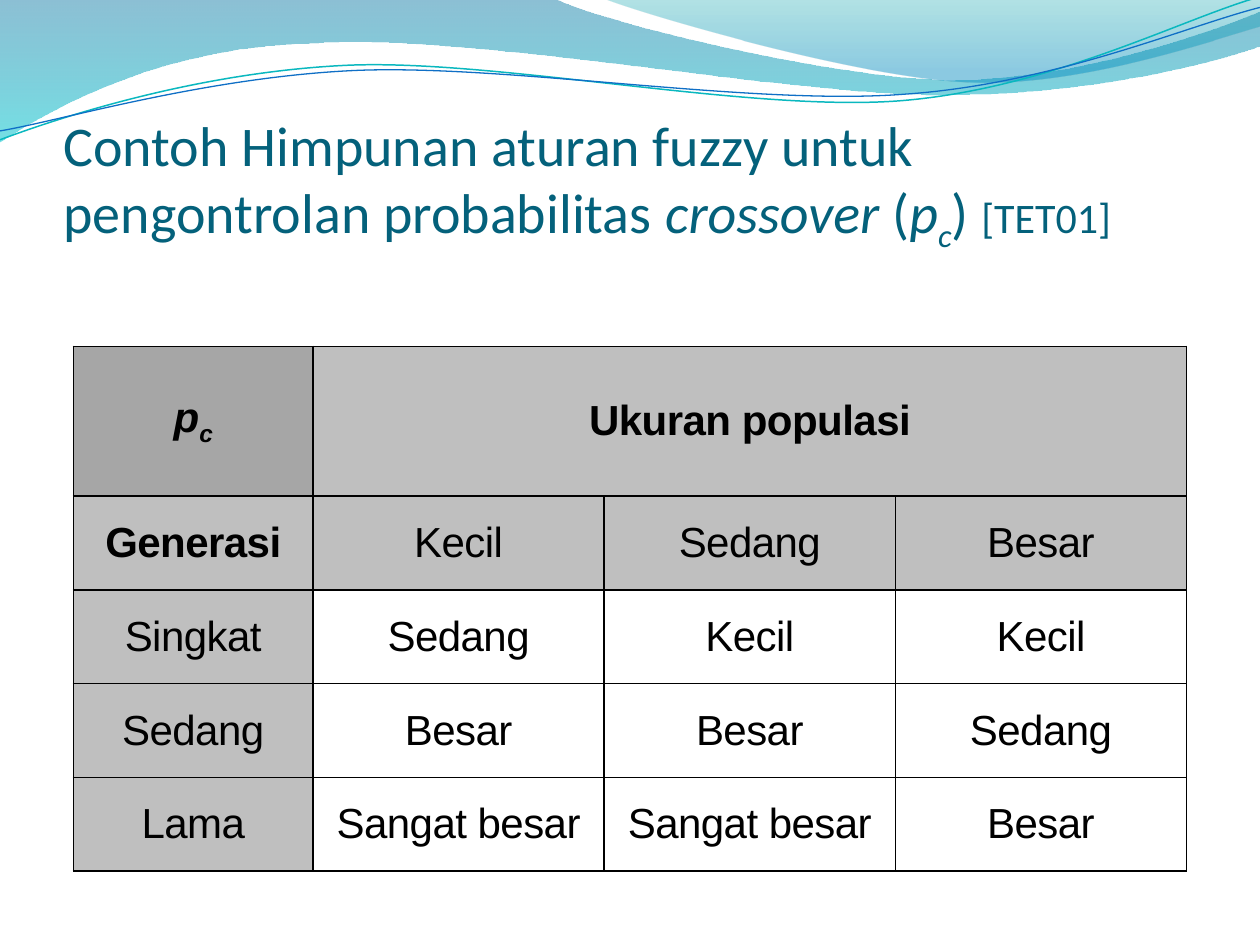
from dataclasses import dataclass

from lxml.etree import SubElement
from pptx import Presentation
from pptx.dml.color import RGBColor
from pptx.enum.text import MSO_ANCHOR as Anchor, PP_ALIGN as Align
from pptx.oxml.ns import qn
from pptx.util import Cm, Pt


@dataclass(frozen=True)
class Theme:
    title: str = "04617B"
    ink: str = "000000"
    corner: str = "A6A6A6"
    header: str = "BFBFBF"
    teal_line: str = "0AB8BF"
    blue_line: str = "0F6FC6"
    # Gradient stops: position, colour, opacity in percent
    wide_wave: tuple = ((0, "0074A1", 45), (1, "00C6CF", 55))
    right_wave: tuple = ((0, "00A1A9", 30), (0.8, "008BBF", 45))
    title_font: str = "Calibri"
    table_font: str = "Arial"
    title_size: int = 32
    small_size: int = 24


THEME = Theme()

# Outlines in cm: a pair is a corner, six numbers are a Bézier segment.
WIDE_WAVE = [
    (0, 0), (11.18, -0.03),
    (12.09, 0.43, 16.87, 1.6, 19.25, 1.6),
    (21.67, 1.6, 24.33, 0.66, 25.4, 0.23),
    (25.43, 0.91),
    (24.97, 1.12, 22.1, 1.93, 18.95, 1.91),
    (15.8, 1.91, 9.7, 0.71, 6.53, 0.86),
    (3.28, 0.91, 1.17, 2.11, -0.03, 2.87),
]
RIGHT_WAVE = [
    (12.17, -0.03),
    (12.93, 0.28, 17.32, 1.57, 19.53, 1.65),
    (21.74, 1.75, 24.41, 0.81, 25.4, 0.53),
    (25.4, 0),
]
# The two thin curves are given before they are turned by CURVE_TILT.
CURVE_TILT = -2.7
TEAL_CURVE = [
    (-0.05, 2.22),
    (1.19, 1.82, 4.02, 1.04, 7.05, 1.05),
    (10.05, 1.07, 15.02, 2.37, 18.08, 2.29),
    (21.13, 2.2, 23.86, 0.91, 25.4, 0.55),
]
BLUE_CURVE = [
    (-0.04, 2.04),
    (1.16, 1.9, 4.17, 1.15, 7.2, 1.16),
    (10.25, 1.18, 15.13, 2.25, 18.19, 2.16),
    (21.22, 2.1, 23.93, 1.06, 25.45, 0.75),
]

RULES = [
    ["", "Ukuran populasi", "", ""],
    ["Generasi", "Kecil", "Sedang", "Besar"],
    ["Singkat", "Sedang", "Kecil", "Kecil"],
    ["Sedang", "Besar", "Besar", "Sedang"],
    ["Lama", "Sangat besar", "Sangat besar", "Besar"],
]


def add_outline(slide, outline, closed):
    """Build a freeform on all points, then join each Bézier's three into one curve."""
    start, *segments = outline
    points = [(Cm(seg[i]), Cm(seg[i + 1]))
              for seg in segments for i in range(0, len(seg), 2)]
    builder = slide.shapes.build_freeform(Cm(start[0]), Cm(start[1]))
    builder.add_line_segments(points, close=closed)
    sp = builder.convert_to_shape()
    sp.shadow.inherit = False

    lines = iter(list(sp.element.iter(qn("a:lnTo"))))
    for seg in segments:
        line = next(lines)
        if len(seg) == 6:
            curve = line.makeelement(qn("a:cubicBezTo"))
            line.addprevious(curve)
            for part in (line, next(lines), next(lines)):
                curve.append(part[0])
                part.getparent().remove(part)
    return sp


def add_wave(slide, outline, stops):
    sp = add_outline(slide, outline, closed=True)
    sp.line.fill.background()
    sp.fill.gradient()
    sp.fill.gradient_angle = 270
    for stop, (position, color, opacity) in zip(sp.fill.gradient_stops, stops):
        stop.position = position
        stop.color.rgb = RGBColor.from_string(color)
        clr = stop._gs.find(qn("a:srgbClr"))
        SubElement(clr, qn("a:alpha")).set("val", str(opacity * 1000))


def add_curve(slide, outline, color, width):
    sp = add_outline(slide, outline, closed=False)
    sp.rotation = CURVE_TILT
    sp.fill.background()
    sp.line.color.rgb = RGBColor.from_string(color)
    sp.line.width = Pt(width)


def add_run(p, text, *, font, size, color, bold=False, italic=False,
            subscript=False, spacing=0):
    r = p.add_run()
    r.text = text
    r.font.name, r.font.size = font, Pt(size)
    r.font.bold, r.font.italic = bold, italic
    r.font.color.rgb = RGBColor.from_string(color)
    rPr = r.font._element
    if subscript:
        rPr.set("baseline", "-25000")
    if spacing:
        rPr.set("spc", str(round(spacing * 100)))


def add_title(slide):
    tf = slide.shapes.add_textbox(Cm(1.28), Cm(1.94), Cm(23.06), Cm(3.18)).text_frame
    tf.word_wrap = True
    tf.vertical_anchor = Anchor.BOTTOM
    tf.margin_left = tf.margin_right = tf.margin_bottom = 0
    tf.margin_top = Cm(0.13)
    p = tf.paragraphs[0]
    style = dict(font=THEME.title_font, size=THEME.title_size, color=THEME.title)
    add_run(p, "Contoh Himpunan aturan fuzzy untuk pengontrolan probabilitas ", **style)
    add_run(p, "crossover", italic=True, **style)
    add_run(p, " (", **style)
    add_run(p, "p", italic=True, **style)
    add_run(p, "c", italic=True, subscript=True, **style)
    add_run(p, ") ", **style)
    add_run(p, "[TET01]", **{**style, "size": THEME.small_size})


def add_borders(cell):
    tcPr = cell._tc.get_or_add_tcPr()
    for side in ("lnL", "lnR", "lnT", "lnB"):
        ln = SubElement(tcPr, qn(f"a:{side}"), w=str(Pt(1)))
        fill = SubElement(ln, qn("a:solidFill"))
        SubElement(fill, qn("a:srgbClr"), val=THEME.ink)


def format_cell(cell, fill):
    add_borders(cell)
    if fill:
        cell.fill.solid()
        cell.fill.fore_color.rgb = RGBColor.from_string(fill)
    else:
        cell.fill.background()
    cell.vertical_anchor = Anchor.MIDDLE
    cell.margin_left = cell.margin_right = Cm(0.18)
    cell.margin_top = cell.margin_bottom = 0
    p = cell.text_frame.paragraphs[0]
    p.alignment = Align.CENTER
    p.space_before, p.space_after = Pt(3), Pt(6)
    return p


def add_rule_table(slide):
    widths, heights = [4.83] + [5.87] * 3, [3.02] + [1.89] * 4
    table = slide.shapes.add_table(len(heights), len(widths), Cm(1.48), Cm(6.98),
                                   Cm(sum(widths)), Cm(sum(heights))).table
    table.first_row = table.horz_banding = False
    for column, width in zip(table.columns, widths):
        column.width = Cm(width)
    for row, height in zip(table.rows, heights):
        row.height = Cm(height)
    table.cell(0, 1).merge(table.cell(0, 3))

    style = dict(font=THEME.table_font, size=THEME.small_size, color=THEME.ink,
                 spacing=-0.3)
    for i, row in enumerate(RULES):
        for j, text in enumerate(row):
            is_header = i < 2 or j == 0
            fill = THEME.header if is_header else None
            p = format_cell(table.cell(i, j), THEME.corner if i == j == 0 else fill)
            if text:
                add_run(p, text, bold=i == 0 or (i, j) == (1, 0), **style)
    corner = table.cell(0, 0).text_frame.paragraphs[0]
    add_run(corner, "p", bold=True, italic=True, **style)
    add_run(corner, "c", bold=True, italic=True, subscript=True, **style)


def main():
    prs = Presentation()
    prs.slide_width, prs.slide_height = Cm(25.4), Cm(19.05)
    s = prs.slides.add_slide(prs.slide_layouts[6])
    add_wave(s, WIDE_WAVE, THEME.wide_wave)
    add_wave(s, RIGHT_WAVE, THEME.right_wave)
    add_curve(s, TEAL_CURVE, THEME.teal_line, 0.85)
    add_curve(s, BLUE_CURVE, THEME.blue_line, 0.75)
    add_title(s)
    add_rule_table(s)
    prs.save("out.pptx")


if __name__ == "__main__":
    main()
